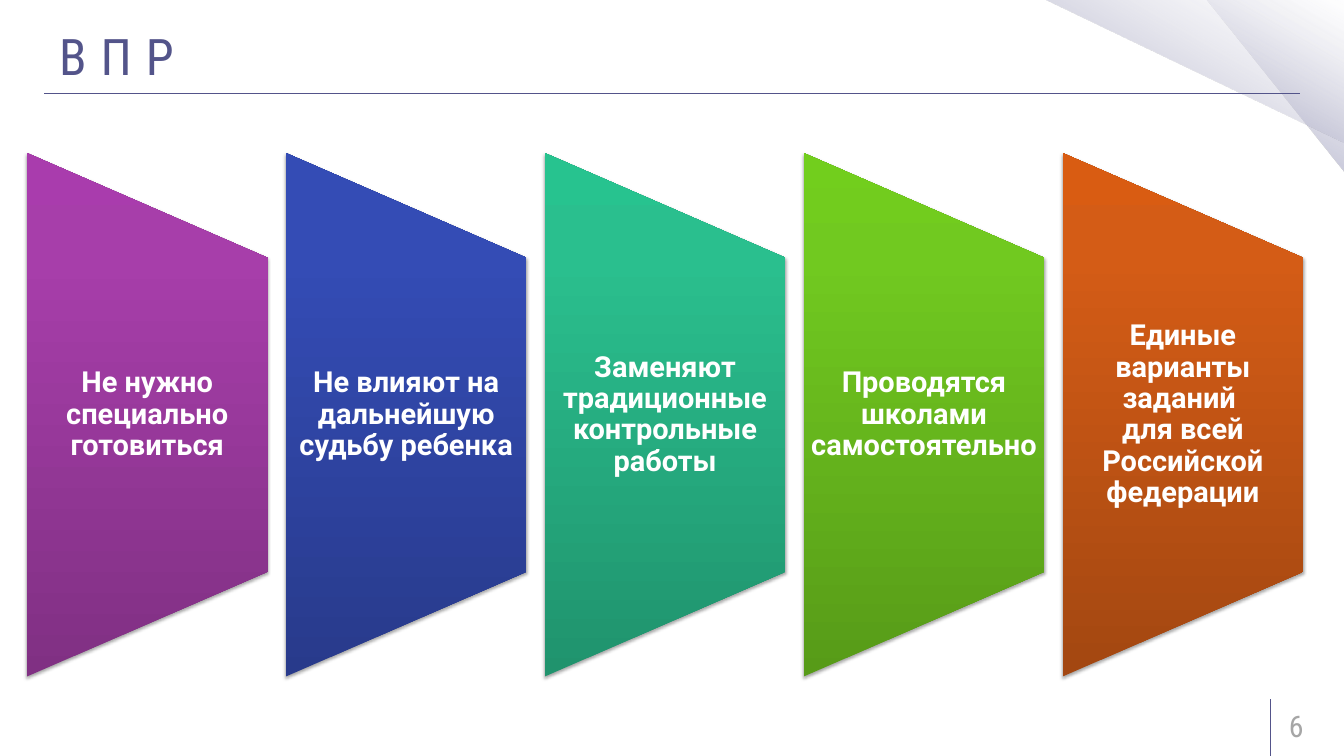
from lxml.etree import SubElement
from pptx import Presentation
from pptx.dml.color import RGBColor
from pptx.enum.shapes import MSO_CONNECTOR, MSO_SHAPE
from pptx.enum.text import MSO_ANCHOR, PP_ALIGN
from pptx.oxml.ns import qn
from pptx.util import Pt

INDIGO = RGBColor(0x53, 0x54, 0x8A)
GRAY = RGBColor(0xA6, 0xA6, 0xA6)
WHITE = RGBColor(0xFF, 0xFF, 0xFF)

# Gradient stops: position %, colour, opacity %
CORNER_STOPS = [
    (0, RGBColor(0xA3, 0xA4, 0xC3), 100),
    (50, RGBColor(0xB6, 0xB6, 0xCD), 44),
    (100, RGBColor(0xE4, 0xE4, 0xEC), 0),
]

# Panels: text, side inset, colours from bottom to top
PANELS = [
    ("Не нужно специально готовиться", 0,
     (RGBColor(0x80, 0x30, 0x83), RGBColor(0xA7, 0x3E, 0xAA), RGBColor(0xA9, 0x3C, 0xAD))),
    ("Не влияют на дальнейшую судьбу ребенка", 0,
     (RGBColor(0x28, 0x3A, 0x8B), RGBColor(0x34, 0x4C, 0xB5), RGBColor(0x32, 0x4A, 0xB8))),
    ("Заменяют традиционные контрольные работы", 0,
     (RGBColor(0x20, 0x93, 0x6D), RGBColor(0x2A, 0xBF, 0x8E), RGBColor(0x27, 0xC3, 0x8F))),
    ("Проводятся школами самостоятельно", 0,
     (RGBColor(0x57, 0x9B, 0x18), RGBColor(0x71, 0xC9, 0x20), RGBColor(0x72, 0xCE, 0x1D))),
    ("Единые варианты заданий \vдля всей Российской федерации", 15.5,
     (RGBColor(0xA3, 0x47, 0x11), RGBColor(0xD4, 0x5C, 0x16), RGBColor(0xD9, 0x5C, 0x12))),
]
PANEL_LEFT, PANEL_PITCH = 28.8, 277.4
PANEL_WIDTH, PANEL_HEIGHT = 257.8, 560.9
PANEL_MIDDLE = 444.4
PANEL_TEXT_HEIGHT = 336.2


def set_gradient(shape, stops, angle, turns_with_shape):
    shape.fill.background()
    no_fill = shape._element.spPr.find(qn("a:noFill"))
    gradient = no_fill.makeelement(
        qn("a:gradFill"), {"rotWithShape": "1" if turns_with_shape else "0"})
    stop_list = SubElement(gradient, qn("a:gsLst"))
    for position, color, opacity in stops:
        stop = SubElement(stop_list, qn("a:gs"), pos=str(position * 1000))
        add_color(stop, color, opacity)
    SubElement(gradient, qn("a:lin"), ang=str(angle * 60000), scaled="0")
    no_fill.getparent().replace(no_fill, gradient)


def add_color(parent, color, opacity):
    srgb = SubElement(parent, qn("a:srgbClr"), val=str(color))
    if opacity < 100:
        SubElement(srgb, qn("a:alpha"), val=str(opacity * 1000))


def add_gradient_shape(slide, kind, box, rotation, stops, angle, turns_with_shape):
    shape = slide.shapes.add_shape(kind, *map(Pt, box))
    shape.rotation = rotation
    shape.shadow.inherit = False
    shape.line.fill.background()
    set_gradient(shape, stops, angle, turns_with_shape)
    return shape


def add_rule(slide, *ends):
    rule = slide.shapes.add_connector(MSO_CONNECTOR.STRAIGHT, *map(Pt, ends))
    rule.line.color.rgb = INDIGO
    rule.line.width = Pt(1)
    SubElement(rule._element.spPr, qn("a:effectLst"))


def add_text(slide, text, box, size, font, color, insets=(13, 6.5)):
    frame = slide.shapes.add_textbox(*map(Pt, box)).text_frame
    frame.word_wrap = True
    frame.vertical_anchor = MSO_ANCHOR.MIDDLE
    frame.margin_left = frame.margin_right = Pt(insets[0])
    frame.margin_top = frame.margin_bottom = Pt(insets[1])
    paragraph = frame.paragraphs[0]
    paragraph.text = text
    for run in paragraph.runs:
        run.font.size = Pt(size)
        run.font.name = font
        run.font.color.rgb = color
    return paragraph


def add_panel(slide, left, text, side_inset, colors):
    # The trapezoid lies on its side, so its width and height are swapped
    center = left + PANEL_WIDTH / 2
    box = (center - PANEL_HEIGHT / 2, PANEL_MIDDLE - PANEL_WIDTH / 2,
           PANEL_HEIGHT, PANEL_WIDTH)
    stops = [(position, color, 100) for position, color in zip((0, 80, 100), colors)]
    panel = add_gradient_shape(slide, MSO_SHAPE.FLOWCHART_MANUAL_OPERATION,
                               box, 270, stops, 270, False)
    effects = panel._element.spPr.find(qn("a:effectLst"))
    shadow = SubElement(effects, qn("a:outerShdw"), blurRad=str(Pt(3.1)),
                        dist=str(Pt(1.8)), dir=str(90 * 60000), rotWithShape="0")
    add_color(shadow, RGBColor(0, 0, 0), 35)

    text_box = (left, PANEL_MIDDLE - PANEL_TEXT_HEIGHT / 2,
                PANEL_WIDTH, PANEL_TEXT_HEIGHT)
    label = add_text(slide, text, text_box, 31, "Roboto", WHITE, (side_inset, 0))
    label.alignment = PP_ALIGN.CENTER
    label.line_spacing = 0.9
    for run in label.runs:
        run.font.bold = True


def main():
    deck = Presentation()
    deck.slide_width, deck.slide_height = Pt(1440), Pt(810)
    slide = deck.slides.add_slide(deck.slide_layouts[6])

    # Corner decoration
    for box in ((1293.1, 0, 146.9, 185), (1118.9, 0, 322.6, 153.4)):
        add_gradient_shape(slide, MSO_SHAPE.RIGHT_TRIANGLE, box, 180,
                           CORNER_STOPS, 120, True)

    # Title and page number with their rules
    add_rule(slide, 47.5, 100, 1392.5, 100)
    add_rule(slide, 1361.5, 810, 1361.5, 749)
    title = add_text(slide, "ВПР", (50.4, 15.1, 1318.3, 88.6), 54,
                     "Roboto Condensed", INDIGO)
    title.runs[0].font._element.set("spc", "1500")
    add_text(slide, "6", (1368, 755.3, 71.3, 43.2), 32, "Roboto Condensed", GRAY)

    # Row of panels
    for index, (text, side_inset, colors) in enumerate(PANELS):
        add_panel(slide, PANEL_LEFT + index * PANEL_PITCH, text, side_inset, colors)

    deck.save("out.pptx")


if __name__ == "__main__":
    main()
